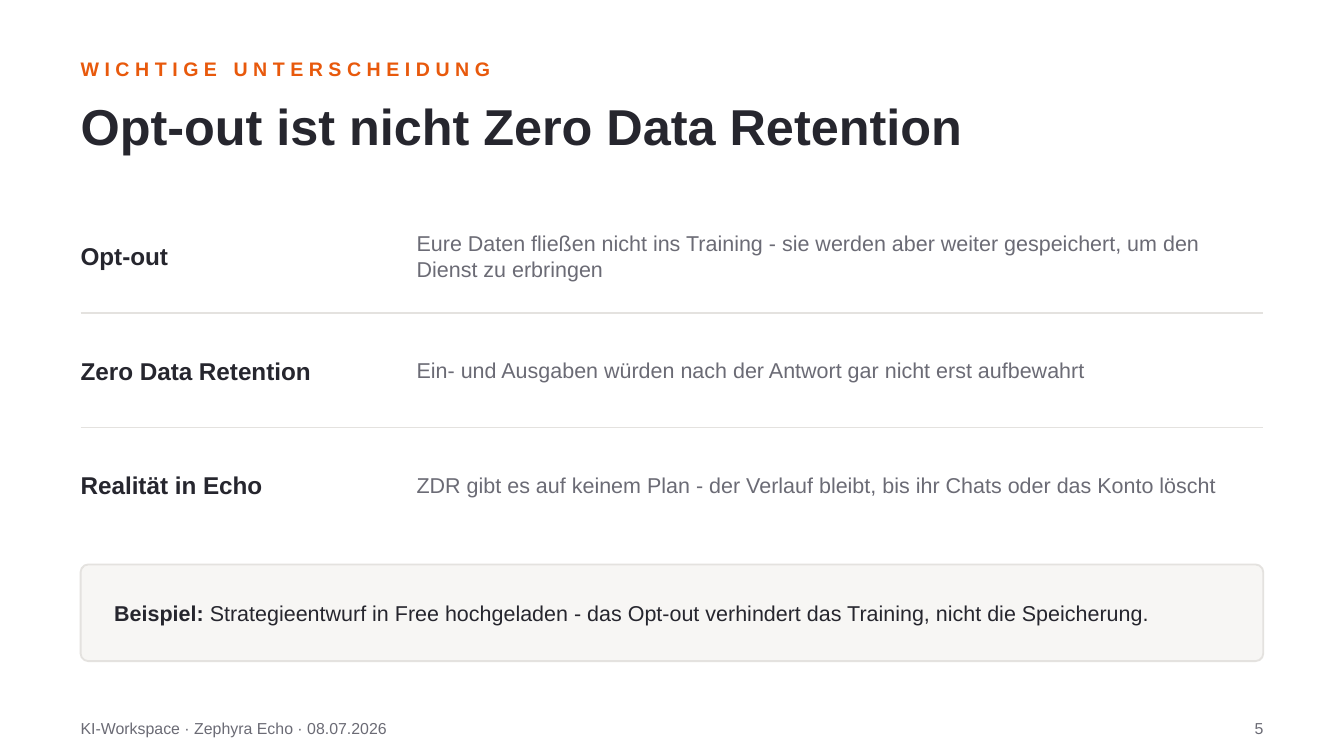
from lxml import etree
from pptx import Presentation
from pptx.dml.color import RGBColor
from pptx.enum import shapes as sh, text as tx
from pptx.oxml.ns import qn
from pptx.util import Pt

HUES = {"accent": "E8590C", "ink": "26262E", "muted": "6B6B75",
        "rule": "E4E2DF", "panel": "F7F6F4"}
LEFT, WIDE = 43.2, 633.6
RIGHT = LEFT + WIDE

deck = Presentation()
deck.slide_width, deck.slide_height = Pt(720), Pt(405)
slide = deck.slides.add_slide(deck.slide_layouts[6])


def hue(name):
    return RGBColor.from_string(HUES[name])


def label(words, x, y, w, h, size, color, bold=False):
    box = slide.shapes.add_textbox(Pt(x), Pt(y), Pt(w), Pt(h))
    frame = box.text_frame
    frame.word_wrap = True
    frame.vertical_anchor = tx.MSO_ANCHOR.MIDDLE
    frame.margin_left = frame.margin_right = 0
    frame.margin_top = frame.margin_bottom = 0
    para = frame.paragraphs[0]
    para.add_run().text = words
    font = para.font
    font.name, font.size, font.bold = "Arial", Pt(size), bold
    font.color.rgb = hue(color)
    return para


kicker = label("WICHTIGE UNTERSCHEIDUNG", LEFT, 27.4, WIDE, 18.7, 10.5, "accent", True)
kicker.runs[0]._r.get_or_add_rPr().set("spc", "300")
label("Opt-out ist nicht Zero Data Retention", LEFT, 44.6, WIDE, 44.6, 27, "ink", True)

rows = [
    ("Opt-out", "Eure Daten fließen nicht ins Training - sie werden aber weiter "
     "gespeichert, um den Dienst zu erbringen"),
    ("Zero Data Retention",
     "Ein- und Ausgaben würden nach der Antwort gar nicht erst aufbewahrt"),
    ("Realität in Echo", "ZDR gibt es auf keinem Plan - der Verlauf bleibt, "
     "bis ihr Chats oder das Konto löscht"),
]
for i, (term, note) in enumerate(rows):
    top = 110.2 + i * 61.2
    if i:
        y = Pt(top - 3.6)
        rule = slide.shapes.add_connector(
            sh.MSO_CONNECTOR.STRAIGHT, Pt(LEFT), y, Pt(RIGHT), y)
        rule.line.color.rgb = hue("rule")
        rule.line.width = Pt(0.75)
        etree.SubElement(rule._element.spPr, qn("a:effectLst"))
    label(term, LEFT, top, 169.2, 54, 13, "ink", True)
    label(note, 223.2, top, 453.6, 54, 11.5, "muted")

panel = slide.shapes.add_shape(
    sh.MSO_SHAPE.ROUNDED_RECTANGLE, Pt(LEFT), Pt(302.4), Pt(WIDE), Pt(51.8))
panel.adjustments[0] = 0.08
panel.shadow.inherit = False
panel.fill.solid()
panel.fill.fore_color.rgb = hue("panel")
panel.line.color.rgb = hue("rule")
panel.line.width = Pt(1)

case = label("Beispiel: ", 61.2, 302.4, 597.6, 51.8, 11.5, "ink")
case.runs[0].font.bold = True
case.add_run().text = ("Strategieentwurf in Free hochgeladen - das Opt-out "
                       "verhindert das Training, nicht die Speicherung.")

label("KI-Workspace · Zephyra Echo · 08.07.2026", LEFT, 381.6, 432, 17.3, 8.5, "muted")
page = label("5", RIGHT - 43.2, 381.6, 43.2, 17.3, 8.5, "muted")
page.alignment = tx.PP_ALIGN.RIGHT

deck.save("out.pptx")
